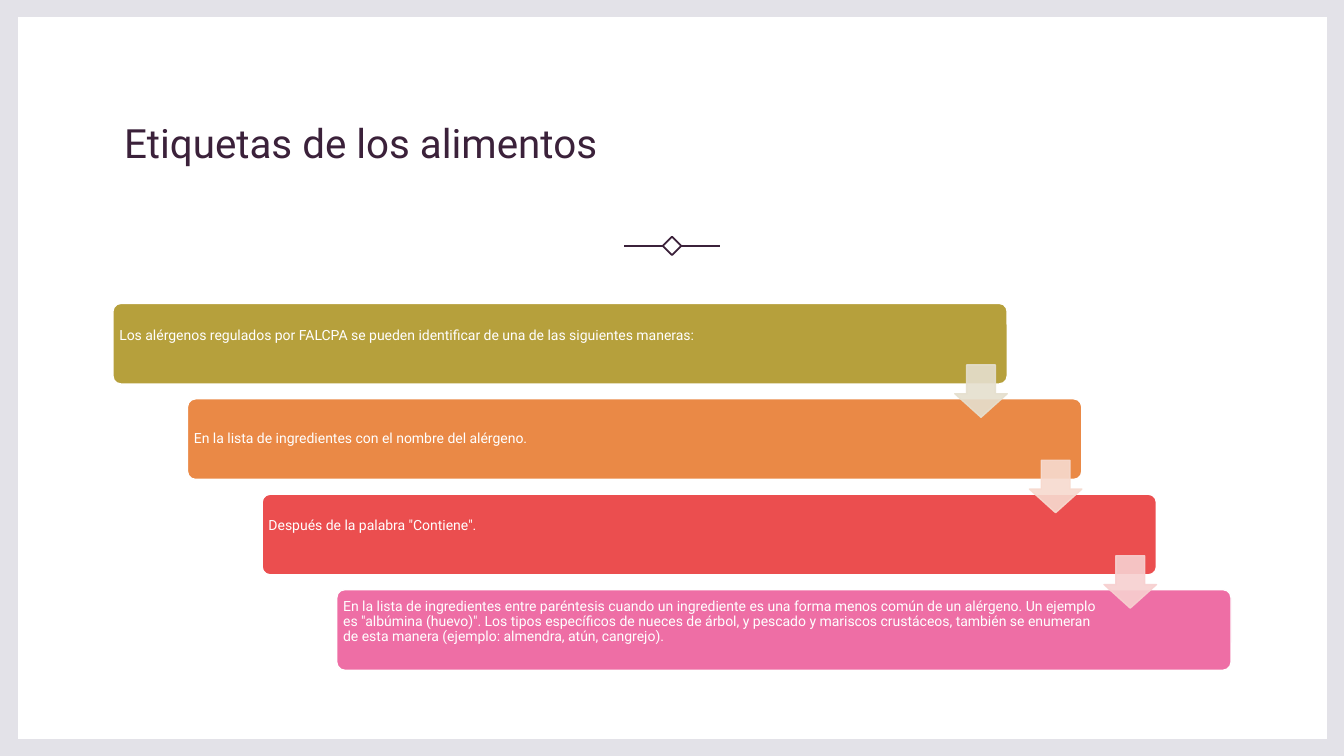
from lxml import etree
from pptx import Presentation
from pptx.dml.color import RGBColor
from pptx.enum import shapes, text
from pptx.oxml.ns import qn
from pptx.util import Inches, Pt

# Content
TITLE = "Etiquetas de los alimentos"
STEPS = [  # wording, box colour, colour of the arrow to the next step, bottom inset
    ("Los alérgenos regulados por FALCPA se pueden identificar de una de las "
     "siguientes maneras:", "B6A03C", "E5DFCE", 0.2),
    ("En la lista de ingredientes con el nombre del alérgeno.",
     "EA8946", "F7DACF", 0.04),
    ('Después de la palabra "Contiene".', "EB4E4F", "F7D0D0", 0.2),
    ("En la lista de ingredientes entre paréntesis cuando un ingrediente es una "
     'forma menos común de un alérgeno. Un ejemplo es "albúmina (huevo)". Los '
     "tipos específicos de nueces de árbol, y pescado y mariscos crustáceos, "
     "también se enumeran de esta manera (ejemplo: almendra, atún, cangrejo).",
     "EE6EA5", None, 0.2),
]


class Theme:
    font = "Roboto"
    frame, paper, ink = "E3E2E8", "FFFFFF", "3B213A"
    title_size, step_size = 28.8, 10


# Layout in inches
WIDTH, HEIGHT = 13.33, 7.5
STEP_LEFT, STEP_TOP, STEP_WIDTH, STEP_HEIGHT = 1.12, 3.01, 8.87, 0.8
SHIFT_X, SHIFT_Y = 0.74, 2.84 / 3
ARROW, ARROW_DROP = 0.52, 0.61
MARK_Y, MARK_SIZE, MARK_GAP, MARK_REACH = 2.44, 0.13, 0.09, 0.475


def colour(value):
    return RGBColor.from_string(value)


def set_line(shape, value, width):
    shape.line.color.rgb = colour(value)
    shape.line.width = Pt(width)


def add_box(kind, left, top, width, height, fill=None):
    shape = page.shapes.add_shape(kind, *map(Inches, (left, top, width, height)))
    shape.shadow.inherit = False
    shape.line.fill.background()
    if fill:
        shape.fill.solid()
        shape.fill.fore_color.rgb = colour(fill)
    else:
        shape.fill.background()
    return shape


def write(shape, words, size, value, spacing, anchor, insets):
    frame = shape.text_frame
    frame.text = words
    sides = ("margin_left", "margin_top", "margin_right", "margin_bottom")
    formats = dict(zip(sides, map(Inches, insets)),
                   word_wrap=True, vertical_anchor=anchor)
    for name, setting in formats.items():
        setattr(frame, name, setting)
    para = frame.paragraphs[0]
    para.alignment = text.PP_ALIGN.LEFT
    para.line_spacing = spacing
    para.font.name = Theme.font
    para.font.size = Pt(size)
    para.font.color.rgb = colour(value)


deck = Presentation()
deck.slide_width, deck.slide_height = Inches(WIDTH), Inches(HEIGHT)
page = deck.slides.add_slide(deck.slide_layouts[5])
kinds = shapes.MSO_SHAPE

# Frame and paper, kept behind the title
title = page.shapes.title
for box in ((0, 0, WIDTH, HEIGHT, Theme.frame),
            (0.18, 0.17, 12.98, 7.16, Theme.paper)):
    panel = add_box(kinds.RECTANGLE, *box)
    title._element.addprevious(panel._element)

# Title
title.left, title.top, title.width, title.height = map(
    Inches, (1.13, 1.05, 11.08, 1.13))
write(title, TITLE, Theme.title_size, Theme.ink, 1.1,
      text.MSO_ANCHOR.BOTTOM, (0.1, 0.05, 0.1, 0.53))

# Diamond divider
centre = WIDTH / 2
diamond = add_box(kinds.RECTANGLE, centre - MARK_SIZE / 2,
                  MARK_Y - MARK_SIZE / 2, MARK_SIZE, MARK_SIZE)
diamond.rotation = 45
set_line(diamond, Theme.ink, 1.25)
for side in (-1, 1):
    near, far = centre + side * MARK_GAP, centre + side * MARK_REACH
    rule = page.shapes.add_connector(
        shapes.MSO_CONNECTOR.STRAIGHT,
        *map(Inches, (near, MARK_Y, far, MARK_Y)))
    set_line(rule, Theme.ink, 1.25)
    etree.SubElement(rule._element.spPr, qn("a:effectLst"))

# Staircase of steps
for index, (words, fill, _, bottom) in enumerate(STEPS):
    step = add_box(kinds.ROUNDED_RECTANGLE, STEP_LEFT + index * SHIFT_X,
                   STEP_TOP + index * SHIFT_Y, STEP_WIDTH, STEP_HEIGHT, fill)
    step.adjustments[0] = 0.1
    set_line(step, Theme.paper, 1)
    write(step, words, Theme.step_size, Theme.paper, 0.9,
          text.MSO_ANCHOR.MIDDLE, (0.04, 0.04, 1.28, bottom))

# Translucent arrows at the right end of each step
for index, (_, _, fill, _) in enumerate(STEPS[:-1]):
    arrow = add_box(kinds.DOWN_ARROW,
                    STEP_LEFT + index * SHIFT_X + STEP_WIDTH - ARROW,
                    STEP_TOP + index * SHIFT_Y + ARROW_DROP, ARROW, ARROW, fill)
    arrow.adjustments[0], arrow.adjustments[1] = 0.55, 0.45
    set_line(arrow, fill, 1)
    for tone in arrow._element.spPr.iter(qn("a:srgbClr")):
        etree.SubElement(tone, qn("a:alpha"), val="90000")

deck.save("out.pptx")
